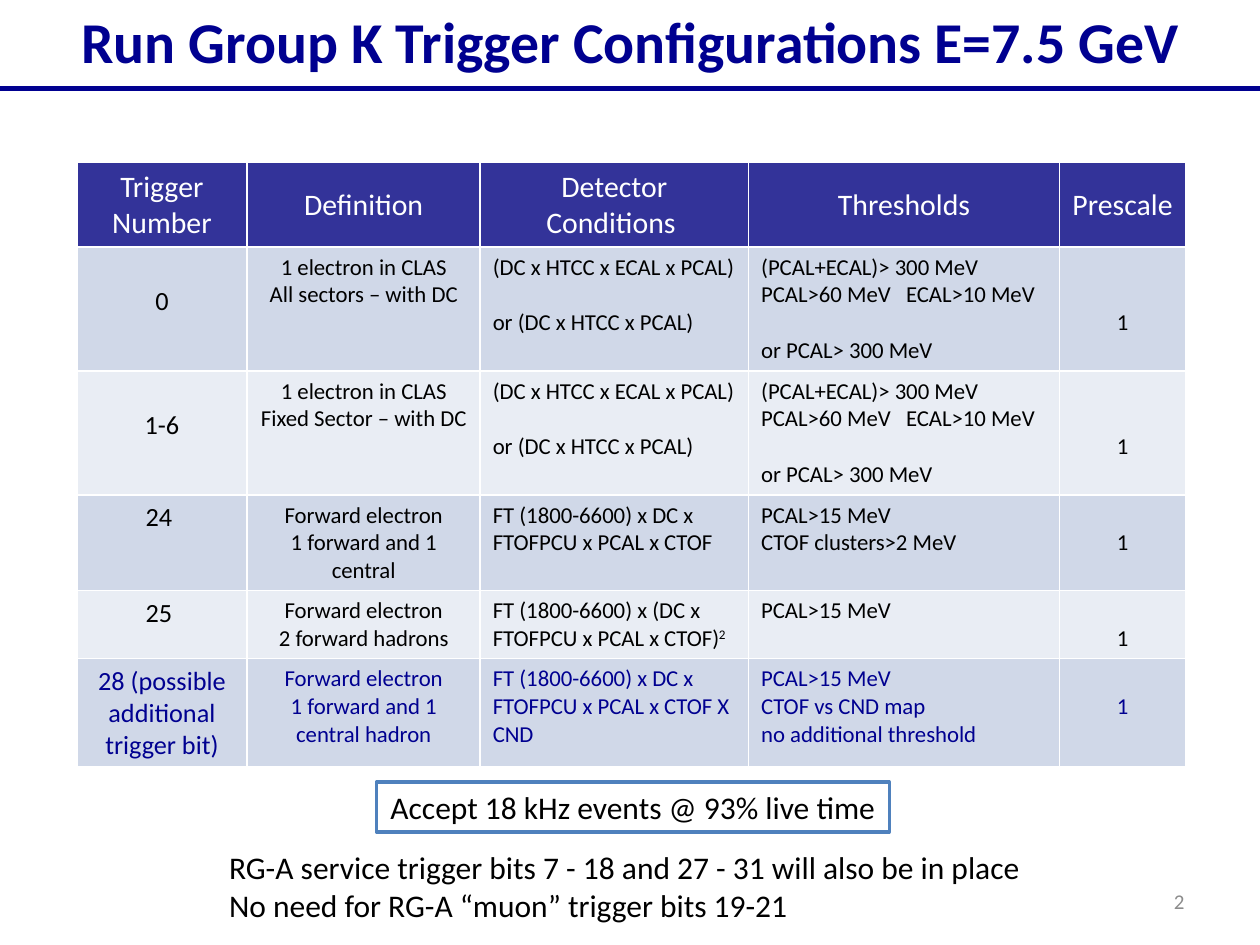
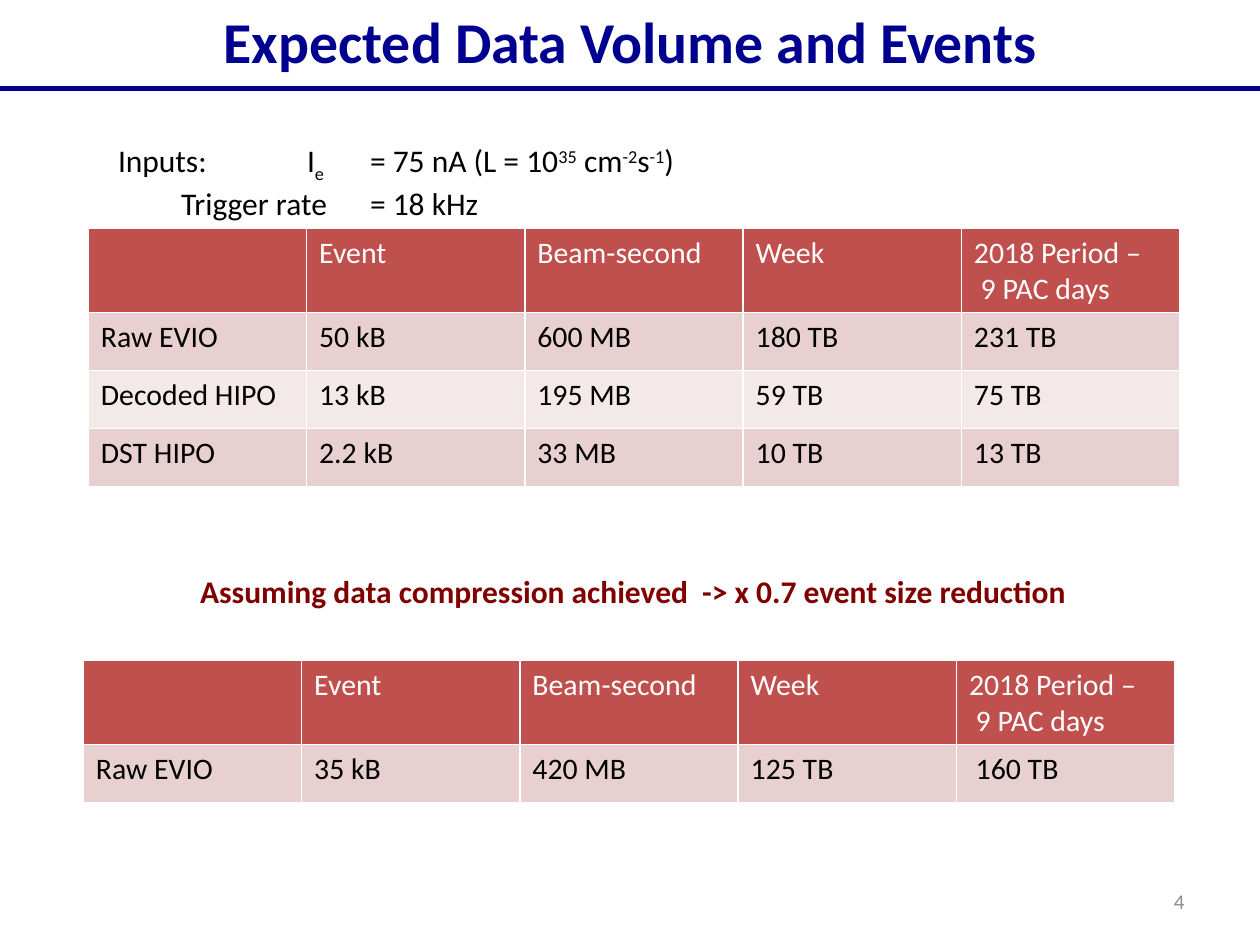
from lxml.etree import SubElement
from pptx import Presentation
from pptx.dml.color import RGBColor
from pptx.enum.shapes import MSO_CONNECTOR, MSO_SHAPE
from pptx.enum.text import MSO_ANCHOR, PP_ALIGN
from pptx.oxml.ns import qn
from pptx.util import Cm, Pt

NAVY = RGBColor(0x00, 0x00, 0x90)
INDIGO = RGBColor(0x33, 0x33, 0x99)
BLUE = RGBColor(0x4F, 0x81, 0xBD)
BLUE_BANDS = (RGBColor(0xD0, 0xD8, 0xE8), RGBColor(0xE9, 0xED, 0xF4))
RED = RGBColor(0xC0, 0x50, 0x4D)
RED_BANDS = (RGBColor(0xE8, 0xD0, 0xD0), RGBColor(0xF4, 0xE9, 0xE9))
MAROON = RGBColor(0x80, 0x00, 0x00)
GREY = RGBColor(0x8C, 0x8C, 0x8C)
BLACK = RGBColor(0x00, 0x00, 0x00)
WHITE = RGBColor(0xFF, 0xFF, 0xFF)

LEFT, CENTER, RIGHT = PP_ALIGN.LEFT, PP_ALIGN.CENTER, PP_ALIGN.RIGHT
LINE = 1.22
SUPER, SUB = 30, -25


def write(frame, text, size=18, color=BLACK, bold=False, align=LEFT, gap_before=None, tabs=None):
    """Each line is a string or a list of (text, baseline) spans."""
    lines = [text] if isinstance(text, str) else text
    for index, line in enumerate(lines):
        para = frame.add_paragraph() if index else frame.paragraphs[0]
        para.alignment = align
        if index == gap_before:
            para.space_before = Pt(size * LINE)
        if tabs and index in tabs:
            stops = SubElement(para._p.get_or_add_pPr(), qn("a:tabLst"))
            for stop in tabs[index]:
                SubElement(stops, qn("a:tab"), pos=str(Cm(stop)), algn="l")
        for words, baseline in [(line, 0)] if isinstance(line, str) else line:
            span = para.add_run()
            span.text = words
            span.font.name = "Calibri"
            span.font.size = Pt(size)
            span.font.bold = bold
            span.font.color.rgb = color
            if baseline:
                span.font._element.set("baseline", str(baseline * 1000))


class SlideBuilder:
    def __init__(self, deck):
        self.deck = deck
        self.page = None

    def start(self, title, number):
        self.page = self.deck.slides.add_slide(self.deck.slide_layouts[6])
        self.rule(1.78)
        self.text(title, 0.38, 0, 24.66, 2, size=33, color=NAVY, bold=True, align=CENTER)
        self.text(str(number), 18.21, 17.65, 5.92, 1.02, anchor=MSO_ANCHOR.MIDDLE,
                  size=12, color=GREY, align=RIGHT)

    def rule(self, top):
        line = self.page.shapes.add_connector(
            MSO_CONNECTOR.STRAIGHT, 0, Cm(top), self.deck.slide_width, Cm(top))
        line.line.color.rgb = NAVY
        line.line.width = Pt(3)
        SubElement(line._element.spPr, qn("a:effectLst"))

    def text(self, text, left, top, width, height, anchor=MSO_ANCHOR.TOP, **style):
        box = self.page.shapes.add_textbox(Cm(left), Cm(top), Cm(width), Cm(height))
        box.text_frame.word_wrap = True
        box.text_frame.vertical_anchor = anchor
        write(box.text_frame, text, **style)

    def framed_text(self, text, left, top, width, height, **style):
        box = self.page.shapes.add_shape(
            MSO_SHAPE.RECTANGLE, Cm(left), Cm(top), Cm(width), Cm(height))
        box.shadow.inherit = False
        box.fill.solid()
        box.fill.fore_color.rgb = WHITE
        box.line.color.rgb = BLUE
        box.line.width = Pt(2)
        box.text_frame.word_wrap = True
        write(box.text_frame, text, **style)

    def table(self, left, top, widths, heights):
        frame = self.page.shapes.add_table(
            len(heights), len(widths), Cm(left), Cm(top), Cm(sum(widths)), Cm(sum(heights)))
        grid = frame.table
        for column, width in zip(grid.columns, widths):
            column.width = Cm(width)
        for row, height in zip(grid.rows, heights):
            row.height = Cm(height)
        return grid

    def cell(self, cell, text, fill, anchor=MSO_ANCHOR.TOP, lines_above=0, size=17, **style):
        properties = cell._tc.get_or_add_tcPr()
        for side in ("lnL", "lnR", "lnT", "lnB"):
            border = SubElement(properties, qn(f"a:{side}"), w=str(Pt(1)))
            SubElement(SubElement(border, qn("a:solidFill")), qn("a:srgbClr"), val=str(WHITE))
        cell.fill.solid()
        cell.fill.fore_color.rgb = fill
        cell.vertical_anchor = anchor
        cell.margin_top = Cm(0.13) + Pt(size * LINE * lines_above)
        if text:
            write(cell.text_frame, text, size=size, **style)

    def trigger_table(self, left, top, widths, heights, header, rows):
        grid = self.table(left, top, widths, heights)
        for column, label in enumerate(header):
            self.cell(grid.cell(0, column), label, INDIGO, anchor=MSO_ANCHOR.MIDDLE,
                      color=WHITE, align=CENTER)
        for index, (entries, drops, color) in enumerate(rows):
            for column, entry in enumerate(entries):
                gap = len(entry) - 1 if entry[-1][:3] == "or " else None
                tabs = {1: [2.92]} if "\t" in entry[-2:][0] else None
                self.cell(grid.cell(index + 1, column), entry, BLUE_BANDS[index % 2],
                          lines_above=drops.get(column, 0), size=13 if column else 15,
                          color=color, align=LEFT if column in (2, 3) else CENTER,
                          gap_before=gap, tabs=tabs)

    def volume_table(self, left, top, rows):
        header = ["", "Event", "Beam-second", "Week", ["2018 Period –", " 9 PAC days"]]
        grid = self.table(left, top, [4.4] * len(header), [1.68] + [1.17] * len(rows))
        for index, row in enumerate([header] + rows):
            fill = RED_BANDS[(index - 1) % 2] if index else RED
            for column, entry in enumerate(row):
                self.cell(grid.cell(index, column), entry, fill, color=BLACK if index else WHITE)


def trigger_slide(builder):
    builder.start("Run Group K Trigger Configurations E=7.5 GeV", 2)
    conditions = ["(DC x HTCC x ECAL x PCAL)", "or (DC x HTCC x PCAL)"]
    thresholds = ["(PCAL+ECAL)> 300 MeV", "PCAL>60 MeV\tECAL>10 MeV", "or PCAL> 300 MeV"]
    rows = [
        ([["0"], ["1 electron in CLAS", "All sectors – with DC"], conditions, thresholds, ["1"]],
         {0: 1, 4: 2}, BLACK),
        ([["1-6"], ["1 electron in CLAS", "Fixed Sector – with DC"], conditions, thresholds, ["1"]],
         {0: 1, 4: 2}, BLACK),
        ([["24 "], ["Forward electron", "1 forward and 1 central"],
          ["FT (1800-6600) x DC x FTOFPCU x PCAL x CTOF"],
          ["PCAL>15 MeV", "CTOF clusters>2 MeV"], ["1"]], {4: 1}, BLACK),
        ([["25 "], ["Forward electron", "2 forward hadrons"],
          [[("FT (1800-6600) x (DC x FTOFPCU x PCAL x CTOF)", 0), ("2", SUPER)]],
          ["PCAL>15 MeV"], ["1"]], {4: 1}, BLACK),
        ([["28 (possible additional", "trigger bit)"],
          ["Forward electron", "1 forward and 1 central hadron"],
          ["FT (1800-6600) x DC x FTOFPCU x PCAL x CTOF X CND"],
          ["PCAL>15 MeV", "CTOF vs CND map", "no additional threshold"], ["1"]], {4: 1}, NAVY),
    ]
    builder.trigger_table(
        1.55, 3.28, [3.43, 4.7, 5.41, 6.27, 2.54], [1.68, 2.5, 2.5, 1.93, 1.37, 2.18],
        ["Trigger Number", "Definition", ["Detector", "Conditions "], "Thresholds", "Prescale"],
        rows)
    builder.framed_text("Accept 18 kHz events @ 93% live time", 7.59, 15.77, 10.34, 1,
                        align=CENTER)
    builder.text(["RG-A service trigger bits 7 - 18 and 27 - 31 will also be in place",
                  "No need for RG-A “muon” trigger bits 19-21"], 4.37, 16.97, 16.84, 1.8)


def volume_slide(builder):
    builder.start("Expected Data Volume and Events", 4)
    builder.volume_table(1.78, 4.6, [
        ["Raw EVIO", "50 kB", "600 MB", "180 TB", "231 TB"],
        ["Decoded HIPO", "13 kB", "195 MB", "59 TB", "75 TB"],
        ["DST HIPO", "2.2 kB", "33 MB", "10 TB", "13 TB"],
    ])
    beam = [("Inputs:\tI", 0), ("e", SUB), ("\t= 75 nA (L = 10", 0), ("35", SUPER),
            (" cm", 0), ("-2", SUPER), ("s", 0), ("-1", SUPER), (")", 0)]
    builder.text([beam, "\tTrigger rate\t= 18 kHz"], 2.13, 2.72, 11.94, 1.78,
                 tabs={0: [3.81, 5.08], 1: [1.27, 5.08]})
    builder.volume_table(1.68, 13.31, [["Raw EVIO", "35 kB", "420 MB", "125 TB", " 160 TB"]])
    builder.text("Assuming data compression achieved  -> x 0.7 event size reduction",
                 3.71, 11.4, 18.11, 1, color=MAROON, bold=True, align=CENTER)


def main():
    deck = Presentation()
    deck.slide_width, deck.slide_height = Cm(25.4), Cm(19.05)
    builder = SlideBuilder(deck)
    trigger_slide(builder)
    volume_slide(builder)
    deck.save("out.pptx")


if __name__ == "__main__":
    main()
